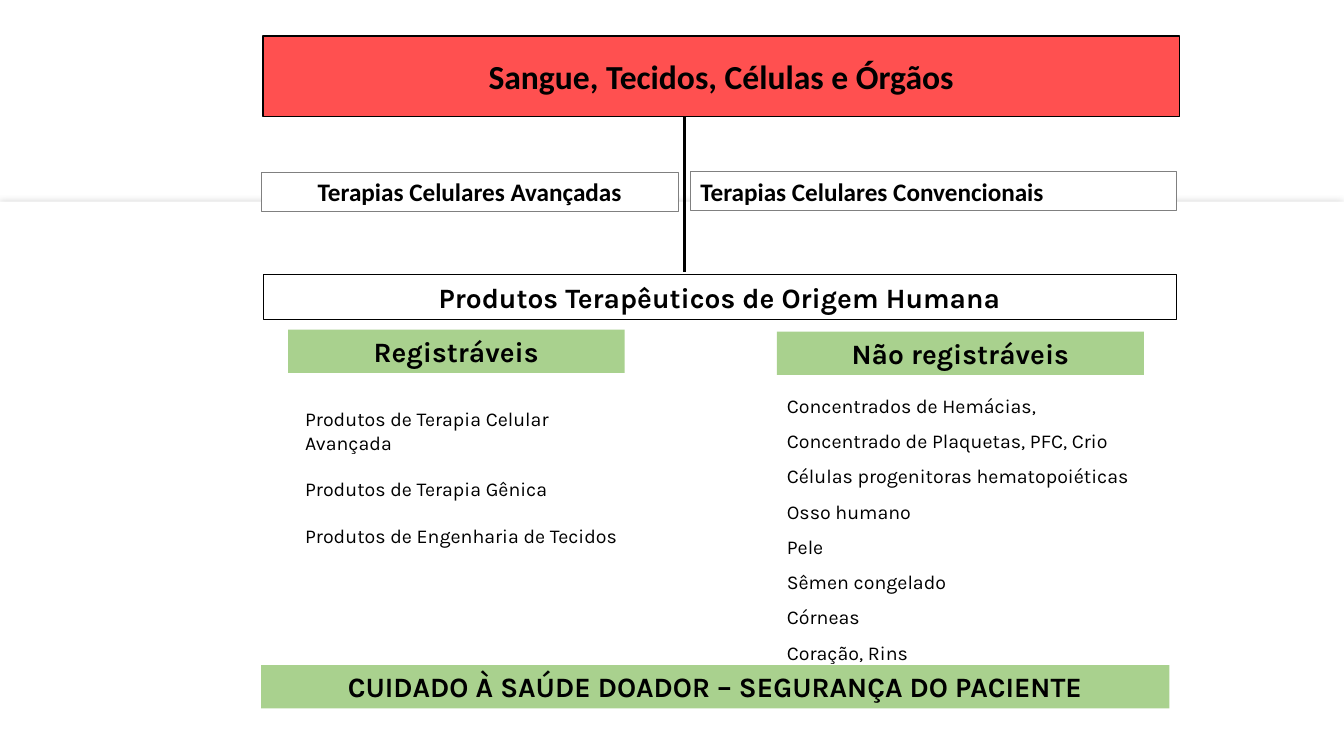
from lxml import etree
from pptx import Presentation
from pptx.dml.color import RGBColor
from pptx.enum.shapes import MSO_CONNECTOR, MSO_SHAPE
from pptx.enum.text import MSO_ANCHOR, PP_ALIGN
from pptx.oxml.ns import qn
from pptx.util import Cm, Pt

RECTANGLE = MSO_SHAPE.RECTANGLE
STRAIGHT = MSO_CONNECTOR.STRAIGHT
MIDDLE = MSO_ANCHOR.MIDDLE
LEFT, CENTER = PP_ALIGN.LEFT, PP_ALIGN.CENTER
COLORS = {"black": "000000", "white": "FFFFFF", "red": "FF5050",
          "green": "A9D18E", "gray": "808080", "shadow": "A6A6A6"}

presentation = Presentation()
presentation.slide_width = Cm(33.87)
presentation.slide_height = Cm(19.05)
slide = presentation.slides.add_slide(presentation.slide_layouts[6])


def color(name):
    return RGBColor.from_string(COLORS[name])


def add_box(place, fill, line=None, line_width=0.75):
    shape = slide.shapes.add_shape(RECTANGLE, *[Cm(length) for length in place])
    shape.shadow.inherit = False
    shape.fill.solid()
    shape.fill.fore_color.rgb = color(fill)
    if line:
        shape.line.color.rgb = color(line)
        shape.line.width = Pt(line_width)
    else:
        shape.line.fill.background()
    return shape


panel = add_box((0, 5.08, 33.87, 13.97), "white")
effects = panel._element.spPr.find(qn("a:effectLst"))
shadow = etree.SubElement(effects, qn("a:outerShdw"), blurRad=str(Pt(5)), dist="0",
                          dir="0", algn="ctr", rotWithShape="0")
shadow_color = etree.SubElement(shadow, qn("a:srgbClr"), val=COLORS["shadow"])
etree.SubElement(shadow_color, qn("a:alpha"), val="42000")

trunk = slide.shapes.add_connector(STRAIGHT, Cm(17.25), Cm(2.95), Cm(17.25), Cm(6.86))
trunk.line.color.rgb = color("black")
trunk.line.width = Pt(2.25)
etree.SubElement(trunk._element.spPr, qn("a:effectLst"))

lists = [
    ((19.58, 9.5, 9.42, 7.26), 1.5, 0,
     ["Concentrados de Hemácias, Concentrado de Plaquetas, PFC, Crio",
      "Células progenitoras hematopoiéticas", "Osso humano", "Pele",
      "Sêmen congelado", "Córneas", "Coração, Rins"]),
    ((7.44, 10.13, 8.89, 3.18), 1.0, 16.5,
     ["Produtos de Terapia Celular Avançada", "Produtos de Terapia Gênica",
      "Produtos de Engenharia de Tecidos"]),
]
for place, line_spacing, gap, items in lists:
    text_box = slide.shapes.add_textbox(*[Cm(length) for length in place])
    frame = text_box.text_frame
    frame.word_wrap = True
    for index, item in enumerate(items):
        paragraph = frame.add_paragraph() if index else frame.paragraphs[0]
        paragraph.text = item
        paragraph.line_spacing = line_spacing
        if index and gap:
            paragraph.space_before = Pt(gap)
        paragraph.font.name = "Karla"
        paragraph.font.size = Pt(14)
        paragraph.font.color.rgb = color("black")

headings = [
    ("Sangue, Tecidos, Células e Órgãos", (6.63, 0.91, 23.09, 2.03),
     "red", "black", 1, "Calibri", 24, CENTER),
    ("Produtos Terapêuticos de Origem Humana", (6.63, 6.93, 23.01, 1.12),
     "white", "black", 0.75, "Karla", 20, CENTER),
    ("Registráveis", (7.26, 8.31, 8.48, 1.09), "green", None, 0, "Karla", 20, CENTER),
    ("Não registráveis", (19.58, 8.36, 9.25, 1.09), "green", None, 0, "Karla", 20, CENTER),
    ("Terapias Celulares Convencionais", (17.4, 4.32, 12.24, 0.99),
     "white", "gray", 0.75, "Calibri", 18, LEFT),
    ("Terapias Celulares Avançadas", (6.58, 4.34, 10.52, 0.99),
     "white", "gray", 0.75, "Calibri", 18, CENTER),
    ("CUIDADO À SAÚDE DOADOR – SEGURANÇA DO PACIENTE", (6.58, 16.76, 22.89, 1.09),
     "green", None, 0, "Karla", 20, CENTER),
]
for text, place, fill, line, line_width, font_name, size, alignment in headings:
    box = add_box(place, fill, line, line_width)
    frame = box.text_frame
    frame.word_wrap = True
    frame.vertical_anchor = MIDDLE
    paragraph = frame.paragraphs[0]
    paragraph.text = text
    paragraph.alignment = alignment
    paragraph.font.name = font_name
    paragraph.font.size = Pt(size)
    paragraph.font.bold = True
    paragraph.font.color.rgb = color("black")

presentation.save("out.pptx")
